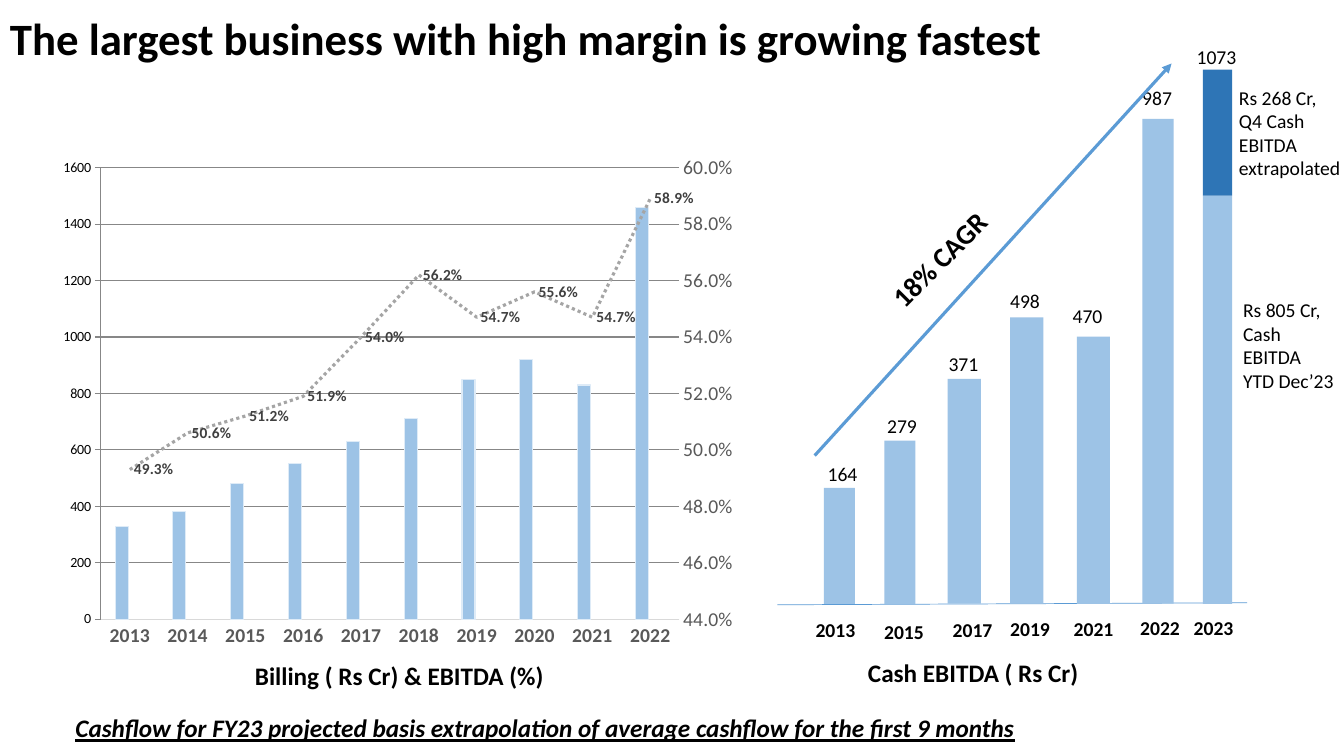
from pptx import Presentation
from pptx.chart.axis import ValueAxis
from pptx.chart.data import CategoryChartData
from pptx.dml.color import RGBColor
from pptx.enum.chart import XL_CHART_TYPE, XL_LABEL_POSITION, XL_MARKER_STYLE, XL_TICK_MARK
from pptx.enum.dml import MSO_LINE
from pptx.enum.shapes import MSO_CONNECTOR, MSO_SHAPE
from pptx.enum.text import MSO_ANCHOR, MSO_AUTO_SIZE
from pptx.oxml import parse_xml
from pptx.oxml.ns import nsdecls, qn
from pptx.util import Pt

COLUMNS = XL_CHART_TYPE.COLUMN_CLUSTERED
LABEL_RIGHT = XL_LABEL_POSITION.RIGHT
NO_MARKER = XL_MARKER_STYLE.NONE
NO_TICK = XL_TICK_MARK.NONE
DOTTED = MSO_LINE.ROUND_DOT
STRAIGHT = MSO_CONNECTOR.STRAIGHT
RECTANGLE = MSO_SHAPE.RECTANGLE
MIDDLE = MSO_ANCHOR.MIDDLE
FIT_SHAPE = MSO_AUTO_SIZE.SHAPE_TO_FIT_TEXT

EMU_PER_PX = 9144  # 100 px to the inch
LIGHT_BLUE, DARK_BLUE, LINE_BLUE = "9DC3E6", "2E75B6", "5B9BD5"
BLACK, AXIS_GREY, LABEL_GREY = "000000", "595959", "404040"
BASELINE = 599

YEARS = [str(year) for year in range(2013, 2023)]
BILLING = [330, 380, 480, 550, 630, 710, 850, 920, 830, 1460]
MARGIN = [0.493, 0.506, 0.512, 0.519, 0.54, 0.562, 0.547, 0.556, 0.547, 0.589]
BILLING_FORMAT = '_(* #,##0.0_);_(* \\(#,##0.0\\);_(* "-"??_);_(@_)'

# year, its left and top; bar left, top and width; value, its left and top
CASH_EBITDA = [
    ("2013", 799, 608, 817, 484, 31, "164", 811, 453),
    ("2015", 867, 610, 877, 437, 31, "279", 870, 406),
    ("2017", 935, 608, 940, 376, 33, "371", 931, 344),
    ("2019", 992, 607, 1002, 315, 33, "498", 992, 282),
    ("2021", 1055, 607, 1068, 334, 33, "470", 1054, 297),
    ("2022", 1121, 606, 1133, 118, 31, "987", 1123, 80),
    ("2023", 1174, 606, 1193, 194, 29, "1073", 1177, 40),
]


def px(length):
    return round(length * EMU_PER_PX)


def color(hex_code):
    return RGBColor.from_string(hex_code)


class SlideBuilder:
    def __init__(self, slide, font_name):
        self.slide = slide
        self.font_name = font_name

    def set_font(self, font, size, hex_code=BLACK, bold=False):
        font.name = self.font_name
        font.size = Pt(size)
        font.bold = bold
        font.color.rgb = color(hex_code)

    def text(self, left, top, width, height, lines, size=14, bold=False):
        box = self.slide.shapes.add_textbox(px(left), px(top), px(width), px(height))
        frame = box.text_frame
        frame.word_wrap = True
        frame.auto_size = FIT_SHAPE
        frame.text = lines
        for paragraph in frame.paragraphs:
            self.set_font(paragraph.font, size, bold=bold)
        return box

    def bar(self, left, top, width, bottom, fill):
        bar = self.slide.shapes.add_shape(
            RECTANGLE, px(left), px(top), px(width), px(bottom - top))
        bar.shadow.inherit = False
        bar.fill.solid()
        bar.fill.fore_color.rgb = color(fill)
        bar.line.fill.background()

    def line(self, x1, y1, x2, y2, weight, arrow=False):
        line = self.slide.shapes.add_connector(STRAIGHT, px(x1), px(y1), px(x2), px(y2))
        line.line.color.rgb = color(LINE_BLUE)
        line.line.width = Pt(weight)
        if arrow:
            line.line._get_or_add_ln().append(
                parse_xml(f'<a:tailEnd {nsdecls("a")} type="triangle"/>'))
        line._element.spPr.append(parse_xml(f'<a:effectLst {nsdecls("a")}/>'))

    def value_axis(self, axis, low, high, step, number_format, bold):
        axis.minimum_scale, axis.maximum_scale, axis.major_unit = low, high, step
        axis.has_major_gridlines = False
        axis.major_tick_mark = NO_TICK
        axis.format.line.fill.background()
        axis.tick_labels.number_format = number_format
        axis.tick_labels.number_format_is_linked = False
        self.set_font(axis.tick_labels.font, 14, AXIS_GREY, bold)

    def billing_chart(self, left, top, width, height):
        data = CategoryChartData()
        data.categories = YEARS
        data.add_series("Series 1", BILLING)
        data.add_series("Series 2", [None] * len(YEARS))
        data.add_series("Series 3", MARGIN, number_format="0.0%")
        chart = self.slide.shapes.add_chart(
            COLUMNS, px(left), px(top), px(width), px(height), data).chart
        chart.has_legend = False
        chart.has_title = False
        self.set_font(chart.font, 10)
        right_axis = move_last_series_to_right_axis(chart)

        years = chart.category_axis
        years.major_tick_mark = NO_TICK
        years.format.line.color.rgb = color("D9D9D9")
        years.format.line.width = Pt(0.75)
        self.set_font(years.tick_labels.font, 14, AXIS_GREY, bold=True)
        self.value_axis(chart.value_axis, 0, 1600, 200, BILLING_FORMAT, True)
        self.value_axis(right_axis, 0.44, 0.6, 0.02, "0.0%", False)

        columns, margin_plot = chart.plots
        columns.vary_by_categories = False
        columns.gap_width, columns.overlap = 219, -27
        for series, fill in zip(columns.series, (LIGHT_BLUE, DARK_BLUE)):
            series.format.fill.solid()
            series.format.fill.fore_color.rgb = color(fill)
        billing = columns.series[0]
        billing.format.line.color.rgb = color("DEEBF7")
        billing.format.line.width = Pt(0.75)

        margin = margin_plot.series[0]
        margin.smooth = False
        margin.marker.style = NO_MARKER
        margin.format.line.color.rgb = color("A5A5A5")
        margin.format.line.width = Pt(2.25)
        margin.format.line.dash_style = DOTTED
        labels = margin.data_labels
        labels.show_value = True
        labels.position = LABEL_RIGHT
        labels.number_format = "0.0%"
        labels.number_format_is_linked = False
        self.set_font(labels.font, 11, LABEL_GREY, bold=True)


def move_last_series_to_right_axis(chart):
    """Turn the last column series into a line, fix the plot frame, return the new axis."""
    plot_area = chart._chartSpace.chart.plotArea
    columns = plot_area.find(qn("c:barChart"))
    series = columns.findall(qn("c:ser"))[-1]
    for flag in series.findall(qn("c:invertIfNegative")):
        series.remove(flag)
    ns = nsdecls("c")
    line_plot = parse_xml(
        f'<c:lineChart {ns}><c:grouping val="standard"/><c:varyColors val="0"/>'
        '<c:marker val="1"/><c:axId val="5001"/><c:axId val="5002"/></c:lineChart>')
    line_plot.insert(2, series)
    columns.addnext(line_plot)

    right_axis = parse_xml(
        f'<c:valAx {ns}><c:axId val="5002"/><c:scaling/><c:delete val="0"/>'
        '<c:axPos val="r"/><c:majorTickMark val="none"/><c:minorTickMark val="none"/>'
        '<c:tickLblPos val="nextTo"/><c:crossAx val="5001"/><c:crosses val="max"/></c:valAx>')
    hidden_years = parse_xml(
        f'<c:catAx {ns}><c:axId val="5001"/><c:scaling/><c:delete val="1"/>'
        '<c:axPos val="b"/><c:crossAx val="5002"/><c:crosses val="autoZero"/></c:catAx>')
    plot_area.find(qn("c:valAx")).addnext(right_axis)
    right_axis.addnext(hidden_years)

    for layout in plot_area.findall(qn("c:layout")):
        plot_area.remove(layout)
    plot_area.insert(0, parse_xml(
        f'<c:layout {ns}><c:manualLayout><c:layoutTarget val="inner"/>'
        '<c:xMode val="edge"/><c:yMode val="edge"/><c:x val="0.12"/><c:y val="0.05"/>'
        '<c:w val="0.79"/><c:h val="0.88"/></c:manualLayout></c:layout>'))
    return ValueAxis(right_axis)


def main():
    deck = Presentation()
    deck.slide_width, deck.slide_height = px(1333), px(750)
    page = SlideBuilder(deck.slides.add_slide(deck.slide_layouts[6]), "Calibri")

    page.billing_chart(13, 141, 726, 509)
    page.line(771, 600, 1237, 598, 0.5)
    for year, year_x, year_y, bar_x, bar_y, bar_w, value, value_x, value_y in CASH_EBITDA:
        page.bar(bar_x, bar_y, bar_w, BASELINE, LIGHT_BLUE)
        page.text(year_x, year_y, 75, 34, year, bold=True)
        page.text(value_x, value_y, 83, 34, value)
    page.bar(1193, 69, 29, 194, DARK_BLUE)
    page.text(1219, 80, 126, 104, "Rs 268 Cr,\nQ4 Cash EBITDA extrapolated")
    page.text(1223, 291, 112, 104, "Rs 805 Cr,\nCash EBITDA YTD Dec’23")

    title = page.text(0, 11, 1203, 59,
                      "The largest business with high margin is growing fastest", 32, True)
    title.text_frame.auto_size = MSO_AUTO_SIZE.NONE
    title.text_frame.vertical_anchor = MIDDLE
    title.text_frame.paragraphs[0].line_spacing = 0.9

    page.line(808, 452, 1162, 63, 2.25, arrow=True)
    growth = page.text(861, 233, 146, 44, "18% CAGR", 20, True)
    growth.rotation = 314.6
    page.text(243, 650, 439, 40, "Billing ( Rs Cr) & EBITDA (%)", 18, True)
    page.text(851, 647, 439, 40, "Cash EBITDA ( Rs Cr)", 18, True)
    footnote = page.text(
        65, 702, 1158, 40,
        "Cashflow for FY23 projected basis extrapolation of average cashflow "
        "for the first 9 months", 18, True)
    footnote_font = footnote.text_frame.paragraphs[0].font
    footnote_font.italic = True
    footnote_font.underline = True

    deck.save("out.pptx")


if __name__ == "__main__":
    main()
